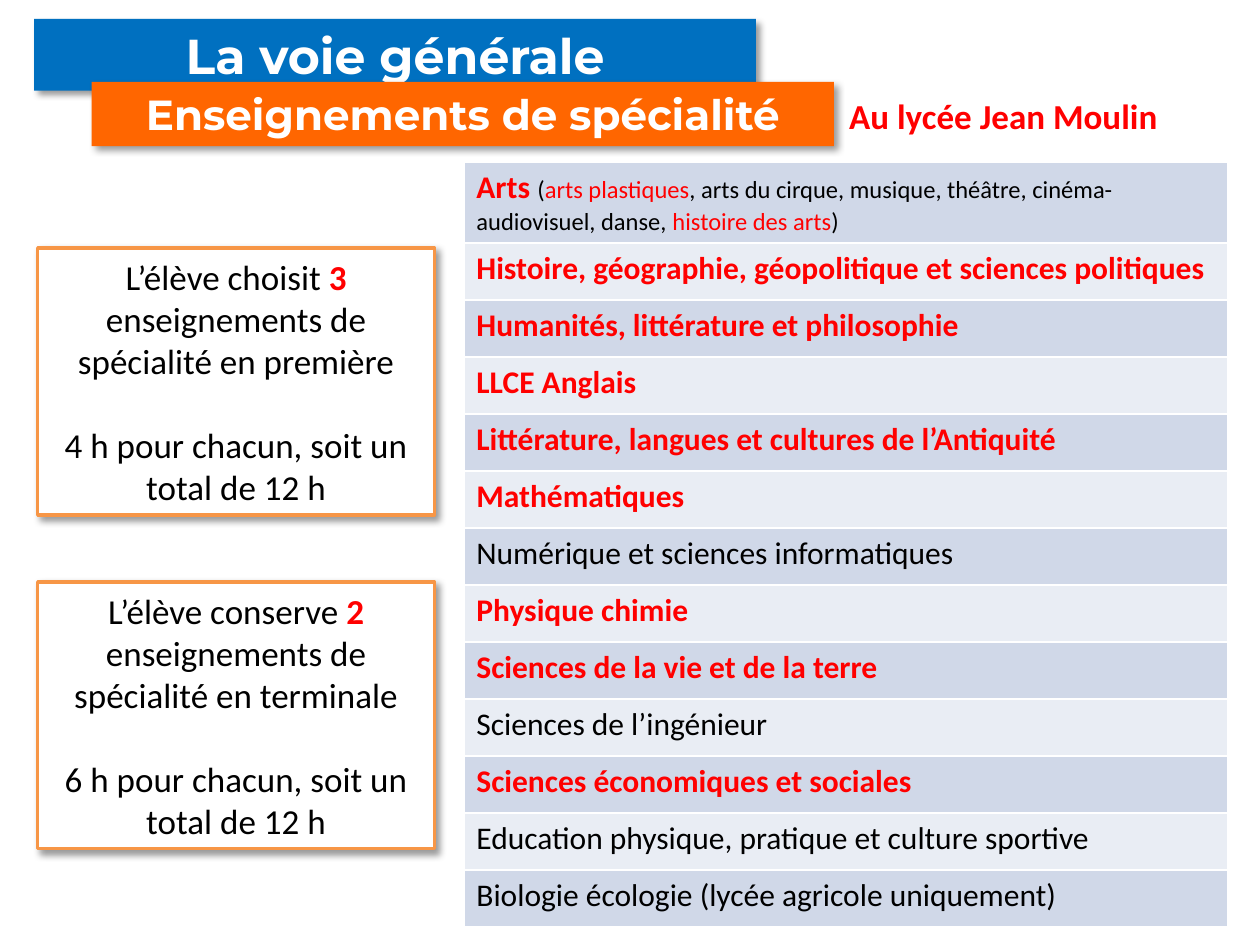
from lxml import etree
from pptx import Presentation
from pptx.dml.color import RGBColor
from pptx.enum.shapes import MSO_SHAPE as SHAPE
from pptx.enum.text import PP_ALIGN as ALIGN
from pptx.oxml import parse_xml
from pptx.util import Cm, Pt

rgb = RGBColor.from_string
RED, BLACK, WHITE = "FF0000", "000000", "FFFFFF"
SHADOW = (
    '<a:effectLst xmlns:a="http://schemas.openxmlformats.org/drawingml/2006/main">'
    '<a:outerShdw blurRad="50800" dist="38100" dir="2700000" algn="tl" rotWithShape="0">'
    '<a:srgbClr val="000000"><a:alpha val="40000"/></a:srgbClr>'
    '</a:outerShdw></a:effectLst>'
)


def add_runs(p, runs, font="Calibri"):
    for text, size, color, bold in runs:
        r = p.add_run()
        r.text = text
        r.font.name = font
        r.font.size = Pt(size)
        r.font.bold = bold
        r.font.color.rgb = rgb(color)


def add_box(left, top, width, height, fill, line=None):
    sp = s.shapes.add_shape(SHAPE.RECTANGLE, Cm(left), Cm(top), Cm(width), Cm(height))
    sp.fill.solid()
    sp.fill.fore_color.rgb = rgb(fill)
    if line:
        sp.line.color.rgb = rgb(line)
        sp.line.width = Pt(2)
    else:
        sp.line.fill.background()
    sp._element.spPr.append(parse_xml(SHADOW))
    sp.text_frame.word_wrap = True
    sp.text_frame.paragraphs[0].alignment = ALIGN.CENTER
    return sp.text_frame


prs = Presentation()
prs.slide_width, prs.slide_height = Cm(25.4), Cm(19.05)
s = prs.slides.add_slide(prs.slide_layouts[6])

tf = add_box(0.69, 0.38, 14.55, 1.45, "0070C0")
add_runs(tf.paragraphs[0], [("La voie générale", 28, WHITE, True)], "Montserrat")

arts = [
    ("Arts ", 18, RED, True),
    ("(", 14, BLACK, False),
    ("arts plastiques", 14, RED, False),
    (", arts du cirque, musique, théâtre, cinéma-audiovisuel, danse, ", 14, BLACK, False),
    ("histoire des arts", 14, RED, False),
    (")", 14, BLACK, False),
]
subjects = [
    ("Histoire, géographie, géopolitique et sciences politiques", True),
    ("Humanités, littérature et philosophie", True),
    ("LLCE Anglais", True),
    ("Littérature, langues et cultures de l’Antiquité", True),
    ("Mathématiques", True),
    ("Numérique et sciences informatiques", False),
    ("Physique chimie", True),
    ("Sciences de la vie et de la terre", True),
    ("Sciences de l’ingénieur", False),
    ("Sciences économiques et sociales", True),
    ("Education physique, pratique et culture sportive", False),
    ("Biologie écologie (lycée agricole uniquement)", False),
]
rows = [arts] + [[(t, 18, RED if offered else BLACK, offered)] for t, offered in subjects]

table = s.shapes.add_table(
    len(rows) + 1, 1, Cm(9.35), Cm(2.24), Cm(15.39), Cm(16.42)
).table
table.rows[0].height = Cm(1.02)
table.cell(0, 0).fill.background()
for i, runs in enumerate(rows, 1):
    table.rows[i].height = Cm(1.6 if i == 1 else 1.15)
    cell = table.cell(i, 0)
    cell.fill.solid()
    cell.fill.fore_color.rgb = rgb("D0D8E8" if i % 2 else "E9EDF4")
    add_runs(cell.text_frame.paragraphs[0], runs)

tf = add_box(1.85, 1.65, 14.96, 1.3, "FF6600")
add_runs(tf.paragraphs[0], [("Enseignements de spécialité", 24, WHITE, True)], "Montserrat")

choices = [
    (5, "L’élève choisit ", "3", " enseignements de spécialité en première", "4"),
    (11.73, "L’élève conserve ", "2 ", "enseignements de spécialité en terminale", "6"),
]
for top, start, count, end, hours in choices:
    tf = add_box(0.76, top, 8, 5.38, WHITE, "F79646")
    add_runs(tf.paragraphs[0], [
        (start, 20, BLACK, False), (count, 20, RED, True), (end, 20, BLACK, False),
    ])
    p = tf.add_paragraph()
    p.alignment = ALIGN.CENTER
    p.space_before = Pt(24)
    add_runs(p, [(f"{hours} h pour chacun, soit un total de 12 h", 20, BLACK, False)])

tf = s.shapes.add_textbox(Cm(16.87), Cm(1.78), Cm(6.96), Cm(1.12)).text_frame
tf.word_wrap = True
add_runs(tf.paragraphs[0], [("Au lycée Jean Moulin", 20, RED, True)])

prs.save("out.pptx")
